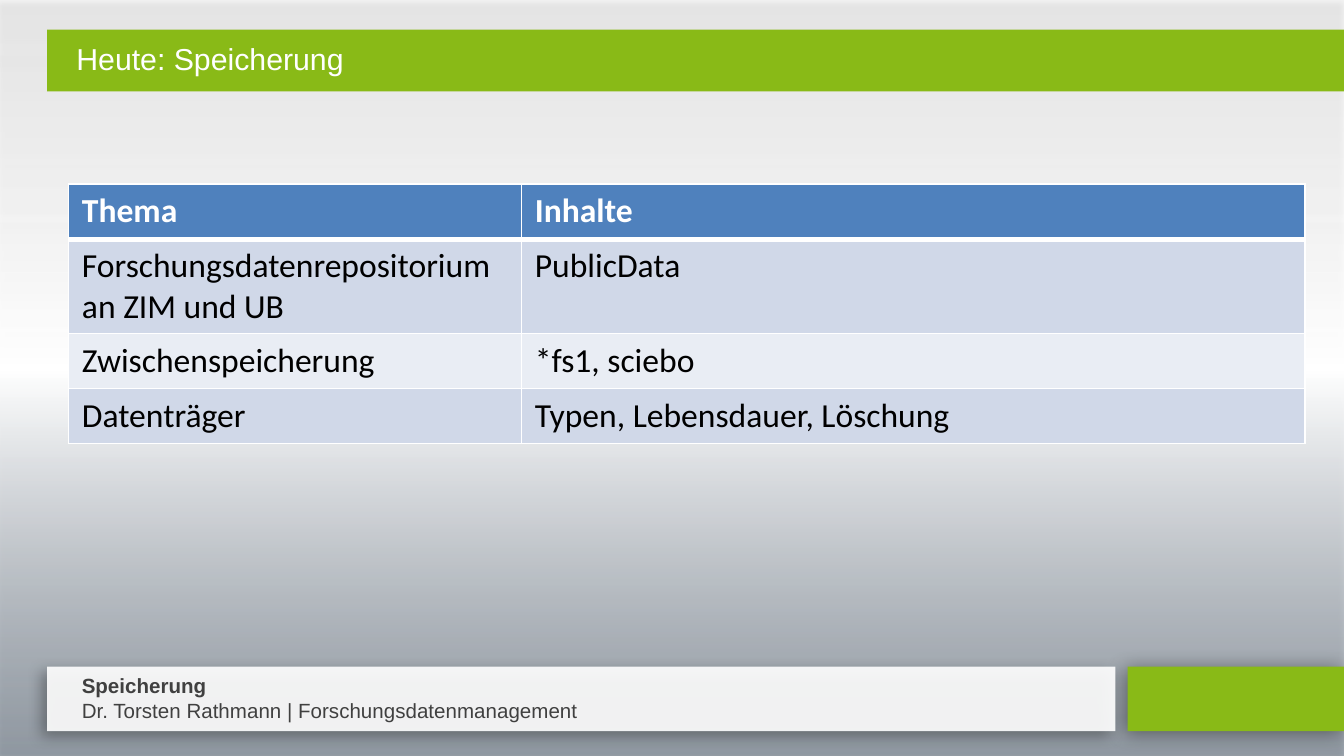
from lxml import etree
from pptx import Presentation
from pptx.dml.color import RGBColor
from pptx.enum.shapes import MSO_SHAPE
from pptx.oxml import parse_xml
from pptx.oxml.ns import nsdecls, qn
from pptx.util import Inches, Pt

RECTANGLE = MSO_SHAPE.RECTANGLE
GREEN, WHITE, BLACK, GREY = "89BA17", "FFFFFF", "000000", "404040"
HEADER_BLUE, BAND_DARK, BAND_LIGHT = "4F81BD", "D0D8E8", "E9EDF4"

PAGE_WIDTH = 10
PAGE_HEIGHT = PAGE_WIDTH * 9 / 16
TITLE = "Heute: Speicherung"
FOOTER = ["Speicherung", "Dr. Torsten Rathmann | Forschungsdatenmanagement"]
TOPICS = [
    ("Thema", "Inhalte"),
    ("Forschungsdatenrepositorium an ZIM und UB", "PublicData"),
    ("Zwischenspeicherung", "*fs1, sciebo"),
    ("Datenträger", "Typen, Lebensdauer, Löschung"),
]
COLUMN_WIDTHS = [3.37, 5.83]
ROW_HEIGHT = 0.41
BACKDROP_STOPS = [(0, "818C98", 75), (51, WHITE, 100), (100, "F2F2F2", 73)]


def color(value):
    return RGBColor.from_string(value)


def add_color(parent, value, alpha):
    node = etree.SubElement(parent, qn("a:srgbClr"), val=value)
    etree.SubElement(node, qn("a:alpha"), val=str(alpha * 1000))


def add_panel(page, area, fill, shadow=None):
    panel = page.shapes.add_shape(RECTANGLE, *map(Inches, area))
    panel.fill.solid()
    panel.fill.fore_color.rgb = color(fill)
    panel.line.fill.background()
    panel.shadow.inherit = False
    if shadow:
        alpha, blur, distance, angle = shadow
        effects = panel._element.spPr.find(qn("a:effectLst"))
        outer = etree.SubElement(
            effects, qn("a:outerShdw"), blurRad=str(Pt(blur)),
            dist=str(Pt(distance)), dir=str(angle * 60000), rotWithShape="0")
        add_color(outer, BLACK, alpha)
    return panel


def set_gradient(panel, stops, angle):
    solid = panel._element.spPr.find(qn("a:solidFill"))
    gradient = parse_xml(f'<a:gradFill {nsdecls("a")} rotWithShape="1"/>')
    stop_list = etree.SubElement(gradient, qn("a:gsLst"))
    for position, value, alpha in stops:
        stop = etree.SubElement(stop_list, qn("a:gs"), pos=str(position * 1000))
        add_color(stop, value, alpha)
    etree.SubElement(gradient, qn("a:lin"), ang=str(angle * 60000), scaled="0")
    solid.getparent().replace(solid, gradient)


def set_opacity(panel, alpha):
    node = panel._element.spPr.find(qn("a:solidFill")).find(qn("a:srgbClr"))
    etree.SubElement(node, qn("a:alpha"), val=str(alpha * 1000))


def style(para, size, font, value, bold=False):
    for span in para.runs:
        span.font.size = Pt(size)
        span.font.name = font
        span.font.bold = bold
        span.font.color.rgb = color(value)


def add_text(page, area, text):
    box = page.shapes.add_textbox(*map(Inches, area))
    box.text_frame.word_wrap = True
    box.text_frame.text = text
    return box.text_frame


def set_borders(cell, bottom_width):
    properties = cell._tc.get_or_add_tcPr()
    widths = {"lnL": 1, "lnR": 1, "lnT": 1, "lnB": bottom_width}
    for index, (side, width) in enumerate(widths.items()):
        border = etree.Element(qn(f"a:{side}"), w=str(Pt(width)))
        fill = etree.SubElement(border, qn("a:solidFill"))
        etree.SubElement(fill, qn("a:srgbClr"), val=WHITE)
        properties.insert(index, border)


def add_topics(page):
    size = (sum(COLUMN_WIDTHS), ROW_HEIGHT * len(TOPICS))
    frame = page.shapes.add_table(
        len(TOPICS), len(COLUMN_WIDTHS), *map(Inches, (0.51, 1.37, *size)))
    table = frame.table
    for column, width in zip(table.columns, COLUMN_WIDTHS):
        column.width = Inches(width)
    for row_index, texts in enumerate(TOPICS):
        header = row_index == 0
        band = BAND_DARK if row_index % 2 else BAND_LIGHT
        table.rows[row_index].height = Inches(ROW_HEIGHT)
        for column_index, text in enumerate(texts):
            cell = table.cell(row_index, column_index)
            cell.text_frame.text = text
            style(cell.text_frame.paragraphs[0], 18, "Calibri",
                  WHITE if header else BLACK, header)
            cell.fill.solid()
            cell.fill.fore_color.rgb = color(HEADER_BLUE if header else band)
            set_borders(cell, 3 if header else 1)


def main():
    deck = Presentation()
    deck.slide_width, deck.slide_height = Inches(PAGE_WIDTH), Inches(PAGE_HEIGHT)
    page = deck.slides.add_slide(deck.slide_layouts[6])

    backdrop = add_panel(
        page, (-0.01, 0, PAGE_WIDTH + 0.01, PAGE_HEIGHT), WHITE, (35, 3.1, 1.8, 90))
    set_gradient(backdrop, BACKDROP_STOPS, 270)
    add_panel(page, (8.39, 4.96, 1.61, 0.48), GREEN, (42, 10.8, 2, 142))
    footer_panel = add_panel(page, (0.35, 4.96, 7.95, 0.48), WHITE, (34, 7.5, 4, 145))
    set_opacity(footer_panel, 91)

    footer = add_text(page, (0.51, 4.96, 5.98, 0.47), "\n".join(FOOTER))
    for index, para in enumerate(footer.paragraphs):
        style(para, 11, "Arial", GREY, index == 0)

    add_panel(page, (0.35, 0.22, 9.69, 0.46), GREEN)
    title = add_text(page, (0.35, 0.22, 9.53, 0.35), TITLE)
    title.margin_top = Inches(0.08)
    heading = title.paragraphs[0]
    heading._p.get_or_add_pPr().set("marL", str(Inches(0.12)))
    style(heading, 16.2, "Arial", WHITE)

    add_topics(page)
    deck.save("out.pptx")


if __name__ == "__main__":
    main()
